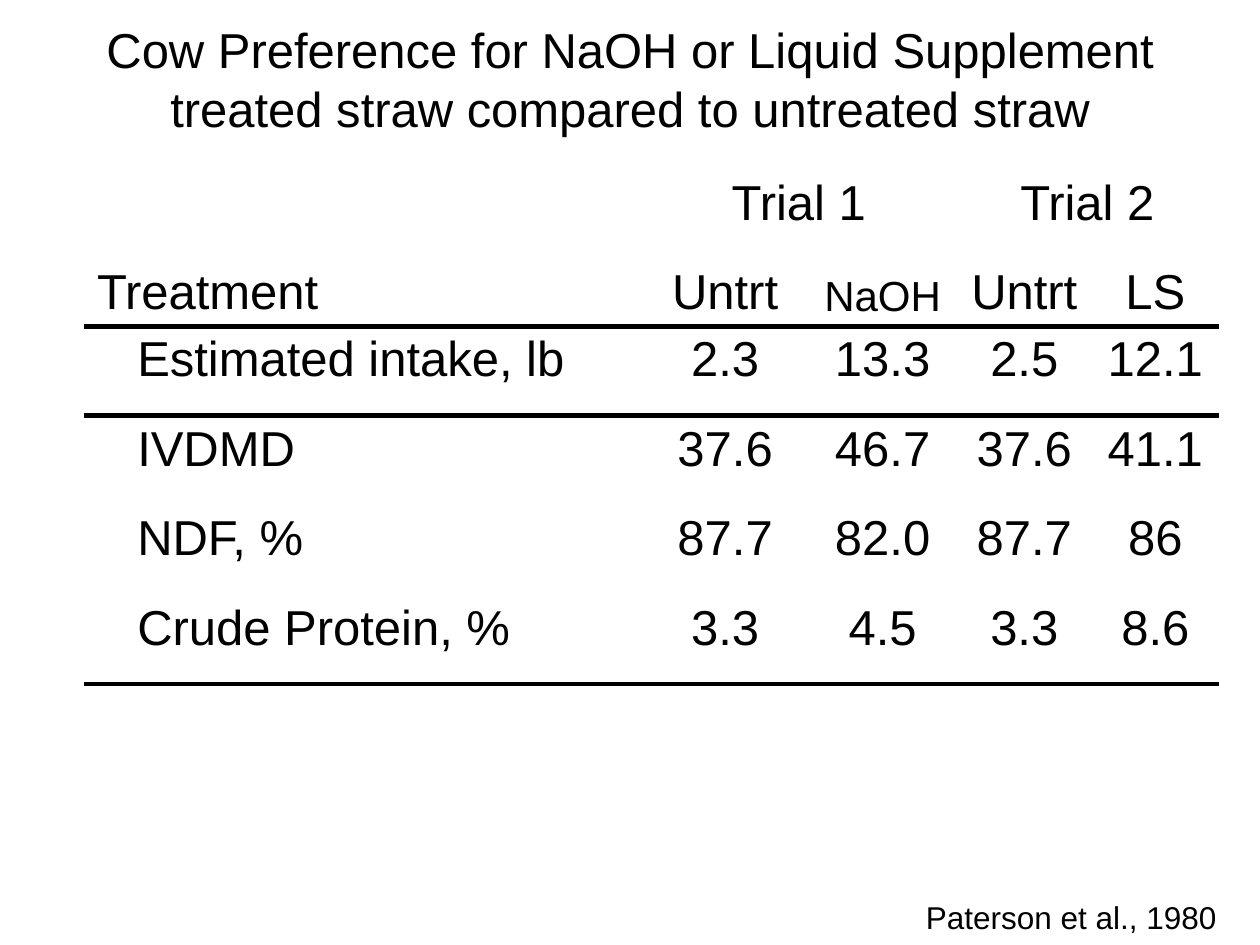
from dataclasses import dataclass

from lxml import etree
from pptx import Presentation
from pptx.dml.color import RGBColor
from pptx.enum.text import MSO_ANCHOR, PP_ALIGN
from pptx.oxml.ns import qn
from pptx.util import Inches, Pt

LEFT, CENTER = PP_ALIGN.LEFT, PP_ALIGN.CENTER
TOP, MIDDLE, BOTTOM = MSO_ANCHOR.TOP, MSO_ANCHOR.MIDDLE, MSO_ANCHOR.BOTTOM


@dataclass(frozen=True)
class Theme:
    font: str = "Arial"
    ink: str = "000000"
    body: int = 28
    compact: int = 24
    citation: int = 18
    rule: int = 3


class SlideBuilder:
    def __init__(self, slide, theme):
        self.slide = slide
        self.theme = theme

    def set_text(self, frame, text, size, align):
        paragraph = frame.paragraphs[0]
        paragraph.text = text
        paragraph.alignment = align
        paragraph.font.name = self.theme.font
        paragraph.font.size = Pt(size)
        paragraph.font.color.rgb = RGBColor.from_string(self.theme.ink)

    def text(self, text, box, size, align=LEFT, anchor=TOP, wrap=True):
        frame = self.slide.shapes.add_textbox(*map(Inches, box)).text_frame
        frame.word_wrap = wrap
        frame.vertical_anchor = anchor
        self.set_text(frame, text, size, align)

    def table(self, rows, left, top, widths, row_height):
        table = self.slide.shapes.add_table(
            len(rows), len(widths), Inches(left), Inches(top),
            Inches(sum(widths)), Inches(row_height * len(rows))).table
        table.first_row = table.horz_banding = False
        for column, width in zip(table.columns, widths):
            column.width = Inches(width)
        for row in table.rows:
            row.height = Inches(row_height)
        return table

    def cell(self, cell, text, size, align, anchor, indent=0.1):
        cell.fill.background()
        cell.vertical_anchor = anchor
        cell.margin_left = Inches(indent)
        if text:
            self.set_text(cell.text_frame, text, size, align)

    def rule(self, cell, edge):
        line = etree.SubElement(cell._tc.get_or_add_tcPr(), qn(f"a:ln{edge}"),
                                w=str(Pt(self.theme.rule)))
        fill = etree.SubElement(line, qn("a:solidFill"))
        etree.SubElement(fill, qn("a:srgbClr"), val=self.theme.ink)


TRIALS = ["", "Trial 1", "", "Trial 2", ""]
TREATMENTS = ["Treatment", "Untrt", "NaOH", "Untrt", "LS"]
MEASURES = [
    ["Estimated intake, lb", "2.3", "13.3", "2.5", "12.1"],
    ["IVDMD", "37.6", "46.7", "37.6", "41.1"],
    ["NDF, %", "87.7", "82.0", "87.7", "86"],
    ["Crude Protein, %", "3.3", "4.5", "3.3", "8.6"],
]
COLUMN_WIDTHS = [4.42, 1.33, 1.17, 1.08, 1]
HEADER_ROWS = 2
RULED_EDGES = {1: "B", 2: "T", 5: "B"}


def main():
    theme = Theme()
    deck = Presentation()
    deck.slide_width, deck.slide_height = Inches(10), Inches(7.5)
    builder = SlideBuilder(deck.slides.add_slide(deck.slide_layouts[6]), theme)

    builder.text("Cow Preference for NaOH or Liquid Supplement "
                 "treated straw compared to untreated straw",
                 (0.5, 0, 9, 1.25), theme.body, CENTER, MIDDLE)

    rows = [TRIALS, TREATMENTS, *MEASURES]
    results = builder.table(rows, 0.67, 1.17, COLUMN_WIDTHS, 0.71)
    for r, row in enumerate(rows):
        is_header = r < HEADER_ROWS
        for c, text in enumerate(row):
            cell = results.cell(r, c)
            if r in RULED_EDGES:
                builder.rule(cell, RULED_EDGES[r])
            builder.cell(cell, text,
                         theme.compact if text == "NaOH" else theme.body,
                         CENTER if c else LEFT,
                         BOTTOM if is_header else TOP,
                         0.1 if c or is_header else 0.42)
    for first in (1, 3):
        results.cell(0, first).merge(results.cell(0, first + 1))

    builder.text("Paterson et al., 1980", (7.25, 7.08, 2.51, 0.4),
                 theme.citation, wrap=False)
    deck.save("out.pptx")


if __name__ == "__main__":
    main()
